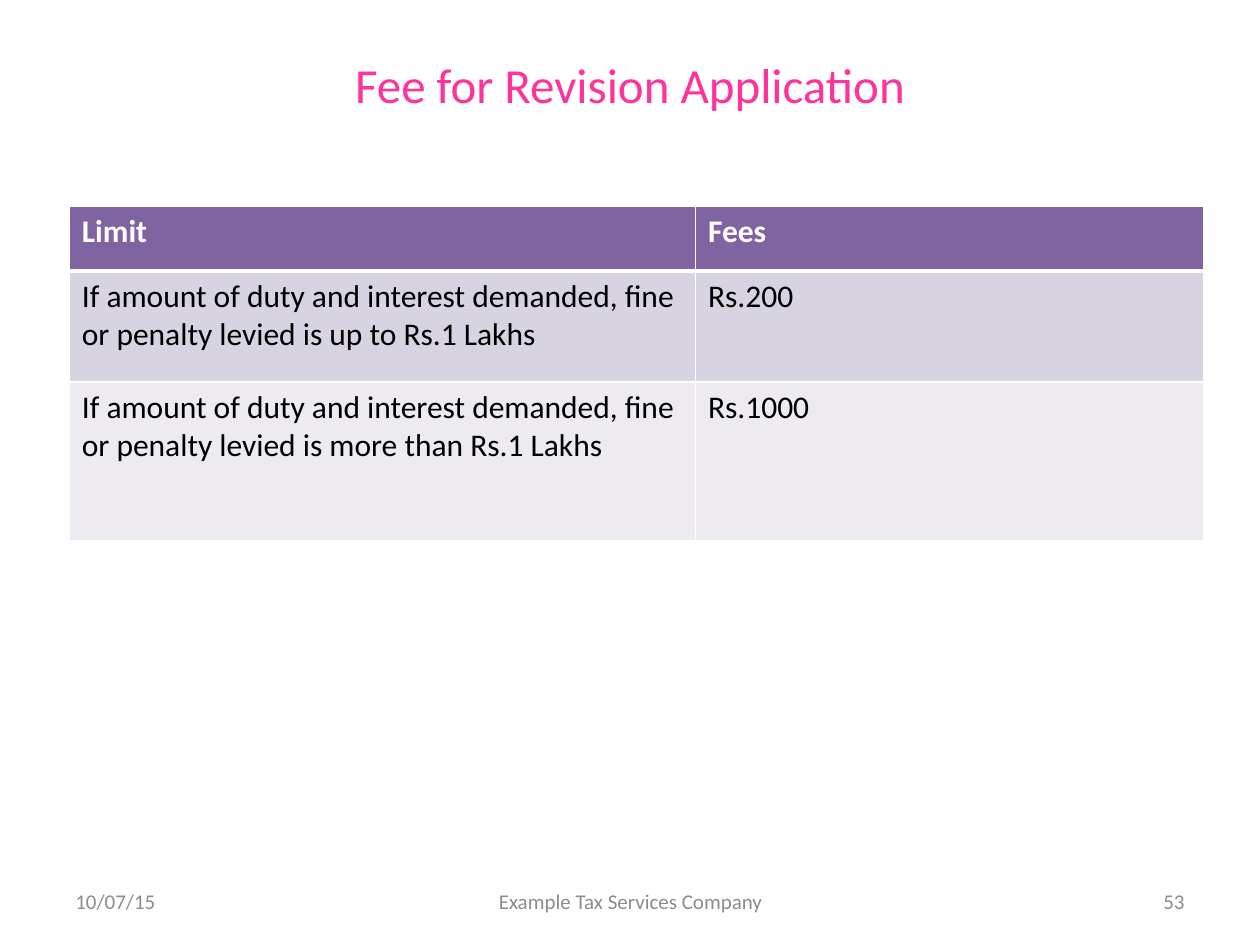
import pptx
import pptx.dml.color
import pptx.enum.text
import pptx.oxml.ns
import pptx.util
from lxml import etree

Inches = pptx.util.Inches
ALIGN = pptx.enum.text.PP_ALIGN
MIDDLE = pptx.enum.text.MSO_ANCHOR.MIDDLE


def color(value):
    return pptx.dml.color.RGBColor.from_string(value)


def write(frame, text, size=18, fill="000000", bold=False, align=ALIGN.LEFT, font="Calibri"):
    """Put one formatted paragraph into a text frame."""
    para = frame.paragraphs[0]
    para.alignment = align
    span = para.add_run()
    span.text = text
    span.font.name = font
    span.font.size = pptx.util.Pt(size)
    span.font.bold = bold
    span.font.color.rgb = color(fill)


def set_border(cell, side, width, line_color):
    """Add one border; call in the order L, R, T, B, before the cell fill."""
    qn = pptx.oxml.ns.qn
    properties = cell._tc.get_or_add_tcPr()
    line = etree.SubElement(properties, qn(f"a:ln{side}"), w=str(pptx.util.Pt(width)))
    solid = etree.SubElement(line, qn("a:solidFill"))
    etree.SubElement(solid, qn("a:srgbClr"), val=line_color)


class FeeSlide:
    title_color = "FF3399"
    header_fill = "8064A2"
    band_fills = ("D8D3E0", "EDEAF0")
    border_color = "FFFFFF"
    footer_color = "8C8C8C"

    def __init__(self, deck):
        self.page = deck.slides.add_slide(deck.slide_layouts[5])

    def title(self, text, left, top, width, height):
        box = self.page.shapes.title
        box.left, box.top = Inches(left), Inches(top)
        box.width, box.height = Inches(width), Inches(height)
        box.text_frame.vertical_anchor = MIDDLE
        write(box.text_frame, text, size=28, fill=self.title_color, align=ALIGN.CENTER)

    def table(self, rows, left, top, widths, heights):
        table = self.page.shapes.add_table(
            len(rows), len(widths), Inches(left), Inches(top),
            Inches(sum(widths)), Inches(sum(heights))).table
        for column, width in zip(table.columns, widths):
            column.width = Inches(width)
        for index, (values, height) in enumerate(zip(rows, heights)):
            table.rows[index].height = Inches(height)
            for cell, value in zip(table.rows[index].cells, values):
                self.cell(cell, value, index)

    def cell(self, cell, text, row):
        header = row == 0
        # The rule under the header is thicker than the rest
        borders = {"L": 1, "R": 1, "T": 3 if row == 1 else 1, "B": 3 if header else 1}
        for side, width in borders.items():
            set_border(cell, side, width, self.border_color)
        cell.fill.solid()
        cell.fill.fore_color.rgb = color(
            self.header_fill if header else self.band_fills[(row - 1) % 2])
        write(cell.text_frame, text, bold=header, fill="FFFFFF" if header else "000000")

    def footer(self, text, left, width, align):
        box = self.page.shapes.add_textbox(
            Inches(left), Inches(6.95), Inches(width), Inches(0.4))
        box.text_frame.word_wrap = True
        box.text_frame.vertical_anchor = MIDDLE
        write(box.text_frame, text, size=12, fill=self.footer_color, align=align)


def main():
    deck = pptx.Presentation()
    deck.slide_width, deck.slide_height = Inches(10), Inches(7.5)
    slide = FeeSlide(deck)

    # Title
    slide.title("Fee for Revision Application", 0.5, 0.33, 9, 0.67)

    # Fee table
    condition = "If amount of duty and interest demanded, fine or penalty levied is {} Rs.1 Lakhs"
    slide.table(
        [("Limit", "Fees"),
         (condition.format("up to"), "Rs.200"),
         (condition.format("more than"), "Rs.1000")],
        0.55, 1.64, widths=(4.97, 4.03), heights=(0.51, 0.88, 1.26))

    # Footer: date, company, page number
    slide.footer("10/07/15", 0.5, 2.33, ALIGN.LEFT)
    slide.footer("Example Tax Services Company", 3.42, 3.17, ALIGN.CENTER)
    slide.footer("53", 7.17, 2.33, ALIGN.RIGHT)

    deck.save("out.pptx")


if __name__ == "__main__":
    main()
